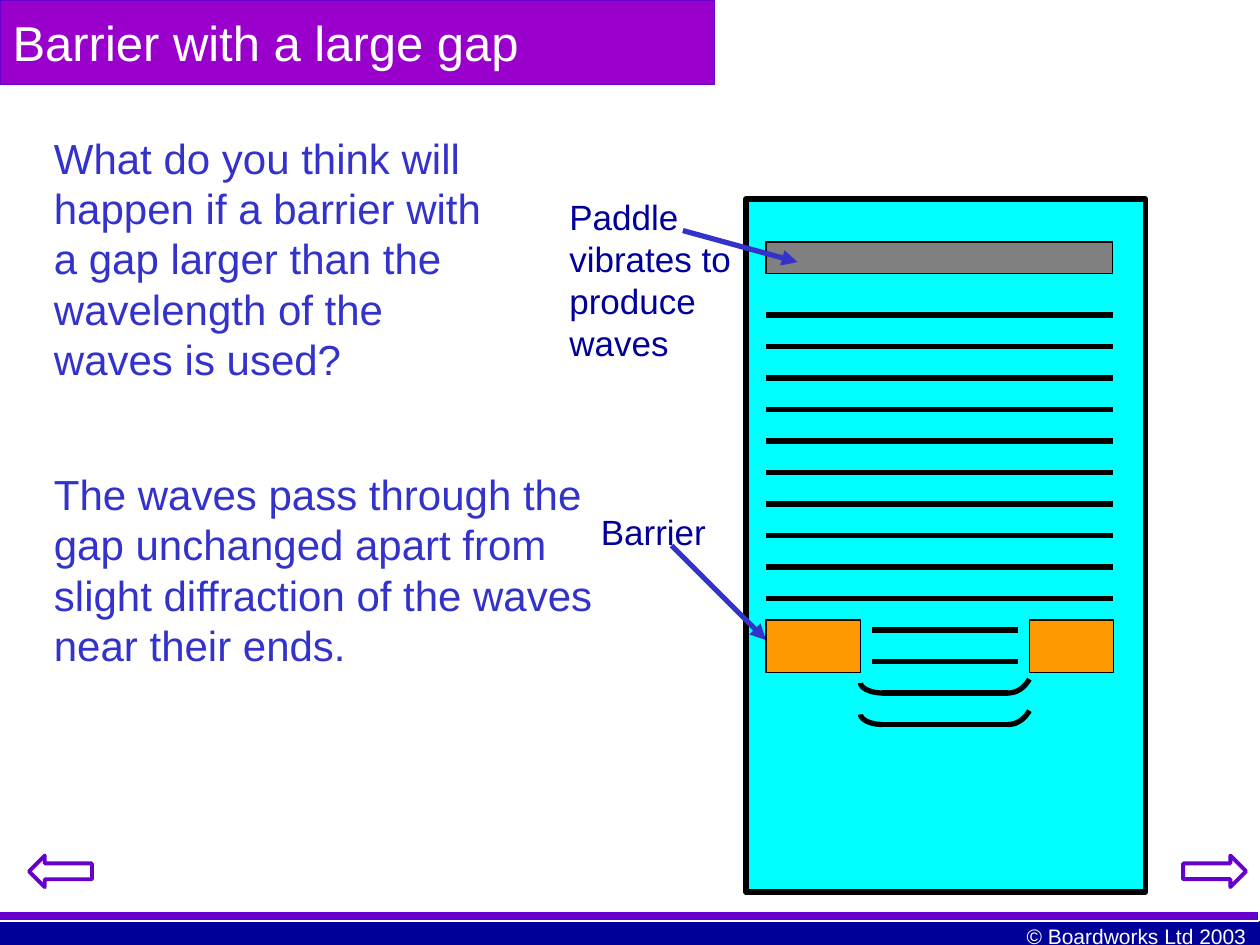
from typing import NamedTuple, Optional

from pptx import Presentation
from pptx.dml.color import RGBColor
from pptx.enum.shapes import MSO_CONNECTOR, MSO_SHAPE
from pptx.enum.text import MSO_ANCHOR as ANCHOR, MSO_AUTO_SIZE as AUTO, PP_ALIGN as ALIGN
from pptx.oxml.ns import qn
from pptx.util import Inches, Pt
from lxml.etree import SubElement

WHITE = RGBColor(0xFF, 0xFF, 0xFF)
BLACK = RGBColor(0x00, 0x00, 0x00)
NAVY = RGBColor(0x00, 0x00, 0x99)
BLUE = RGBColor(0x33, 0x33, 0xCC)
VIOLET = RGBColor(0x66, 0x00, 0xCC)
PURPLE = RGBColor(0x99, 0x00, 0xCC)
CYAN = RGBColor(0x00, 0xFF, 0xFF)
GREY = RGBColor(0x80, 0x80, 0x80)
ORANGE = RGBColor(0xFF, 0x99, 0x00)


class Box(NamedTuple):
    x: float
    y: float
    w: float
    h: float
    fill: RGBColor
    line: Optional[RGBColor] = None
    weight: float = 0.75
    kind: MSO_SHAPE = MSO_SHAPE.RECTANGLE
    rotation: float = 0


class Label(NamedTuple):
    text: str
    x: float
    y: float
    w: float
    h: float
    size: float
    color: RGBColor


def paint(sp, fill: RGBColor, line: Optional[RGBColor], weight: float) -> None:
    sp.fill.solid()
    sp.fill.fore_color.rgb = fill
    if line is None:
        sp.line.fill.background()
    else:
        sp.line.color.rgb = line
        sp.line.width = Pt(weight)


def add_box(shapes, b: Box) -> None:
    sp = shapes.add_shape(b.kind, Inches(b.x), Inches(b.y), Inches(b.w), Inches(b.h))
    sp.shadow.inherit = False
    sp.rotation = b.rotation
    paint(sp, b.fill, b.line, b.weight)


def write(tf, text: str, *, size: float, color: RGBColor,
          align=ALIGN.LEFT, leading: Optional[float] = None) -> None:
    p = tf.paragraphs[0]
    p.alignment = align
    if leading:
        p.line_spacing = Pt(size * leading)
    r = p.add_run()
    r.text = text
    r.font.name = "Arial"
    r.font.size = Pt(size)
    r.font.color.rgb = color


def add_label(shapes, label: Label, **fmt) -> None:
    sp = shapes.add_textbox(Inches(label.x), Inches(label.y), Inches(label.w), Inches(label.h))
    tf = sp.text_frame
    tf.word_wrap = True
    tf.auto_size = AUTO.SHAPE_TO_FIT_TEXT
    write(tf, label.text, size=label.size, color=label.color, **fmt)


def add_line(shapes, x1: float, y1: float, x2: float, y2: float,
             color: RGBColor = BLACK, arrow: bool = False) -> None:
    c = shapes.add_connector(MSO_CONNECTOR.STRAIGHT, Inches(x1), Inches(y1), Inches(x2), Inches(y2))
    c.line.color.rgb = color
    c.line.width = Pt(3)
    if arrow:
        SubElement(c.line._get_or_add_ln(), qn("a:tailEnd"), type="triangle")
    SubElement(c._element.spPr, qn("a:effectLst"))


def add_curve(shapes, controls: list[tuple[float, float]], steps: int = 16) -> None:
    """Draw an open cubic Bezier curve through sampled points."""
    points = []
    for i in range(steps + 1):
        t = i / steps
        weights = ((1 - t) ** 3, 3 * t * (1 - t) ** 2, 3 * t * t * (1 - t), t ** 3)
        points.append(tuple(Inches(sum(k * c[axis] for k, c in zip(weights, controls)))
                            for axis in (0, 1)))
    builder = shapes.build_freeform(*points[0])
    builder.add_line_segments(points[1:], close=False)
    sp = builder.convert_to_shape()
    sp.shadow.inherit = False
    sp.fill.background()
    sp.line.color.rgb = BLACK
    sp.line.width = Pt(3)


def add_diffracted_wave(shapes, y: float) -> None:
    add_line(shapes, 7, y, 8, y)
    add_curve(shapes, [(7, y), (6.91, y), (6.83, y - 0.04), (6.83, y - 0.08)])
    add_curve(shapes, [(8.17, y - 0.11), (8.13, y - 0.04), (8.07, y), (8, y)])


def main() -> None:
    prs = Presentation()
    prs.slide_width, prs.slide_height = Inches(10), Inches(7.5)
    slide = prs.slides.add_slide(prs.slide_layouts[5])
    shapes = slide.shapes

    # Footer bars, navigation arrows and copyright line
    arrow = Box(9.39, 6.79, 0.5, 0.25, WHITE, VIOLET, 2.25, MSO_SHAPE.RIGHT_ARROW)
    for b in (Box(0, 7.31, 10, 0.19, NAVY),
              Box(-0.01, 7.23, 10, 0.08, VIOLET, WHITE),
              arrow,
              arrow._replace(x=0.23, rotation=180)):
        add_box(shapes, b)
    add_label(shapes, Label("© Boardworks Ltd 2003", 7.66, 7.28, 2.33, 0.3, 12, WHITE),
              align=ALIGN.RIGHT)

    # Title
    title = shapes.title
    title.left, title.top = Inches(0), Inches(0)
    title.width, title.height = Inches(5.67), Inches(0.67)
    paint(title, PURPLE, VIOLET, 0.75)
    tf = title.text_frame
    tf.word_wrap = True
    tf.auto_size = AUTO.NONE
    tf.vertical_anchor = ANCHOR.MIDDLE
    write(tf, "Barrier with a large gap", size=28, color=WHITE)

    # Ripple tank, paddle and incoming waves
    left, right, pitch = 6.08, 8.83, 0.25
    add_box(shapes, Box(5.92, 1.58, 3.17, 5.5, CYAN, BLACK, 3))
    add_box(shapes, Box(left, 1.92, right - left, 0.25, GREY, BLACK))
    for i in range(10):
        y = 2.5 + i * pitch
        add_line(shapes, left, y, right, y)

    # Question, answer and diagram labels
    for label in (
        Label("What do you think will happen if a barrier with a gap larger than "
              "the wavelength of the waves is used?", 0.33, 1, 3.83, 2.1, 24, BLUE),
        Label("The waves pass through the gap unchanged apart from slight "
              "diffraction of the waves near their ends.", 0.33, 3.67, 4.67, 1.7, 24, BLUE),
        Label("Paddle vibrates to produce waves", 4.42, 1.5, 1.67, 1.43, 20, NAVY),
        Label("Barrier", 4.67, 4, 1.5, 0.43, 20, NAVY),
    ):
        add_label(shapes, label, leading=1.2)
    add_line(shapes, 5.42, 1.83, 6.33, 2.08, BLUE, arrow=True)
    add_line(shapes, 5.33, 4.33, left, 5.08, BLUE, arrow=True)

    # Barrier, waves in the gap and waves beyond it
    for x, w in ((left, 0.75), (8.17, 0.67)):
        add_box(shapes, Box(x, 4.92, w, 0.42, ORANGE, BLACK))
    for y in (5, 5.25):
        add_line(shapes, 6.92, y, 8.08, y)
    for y in (5.5, 5.75):
        add_diffracted_wave(shapes, y)

    prs.save("out.pptx")


if __name__ == "__main__":
    main()
